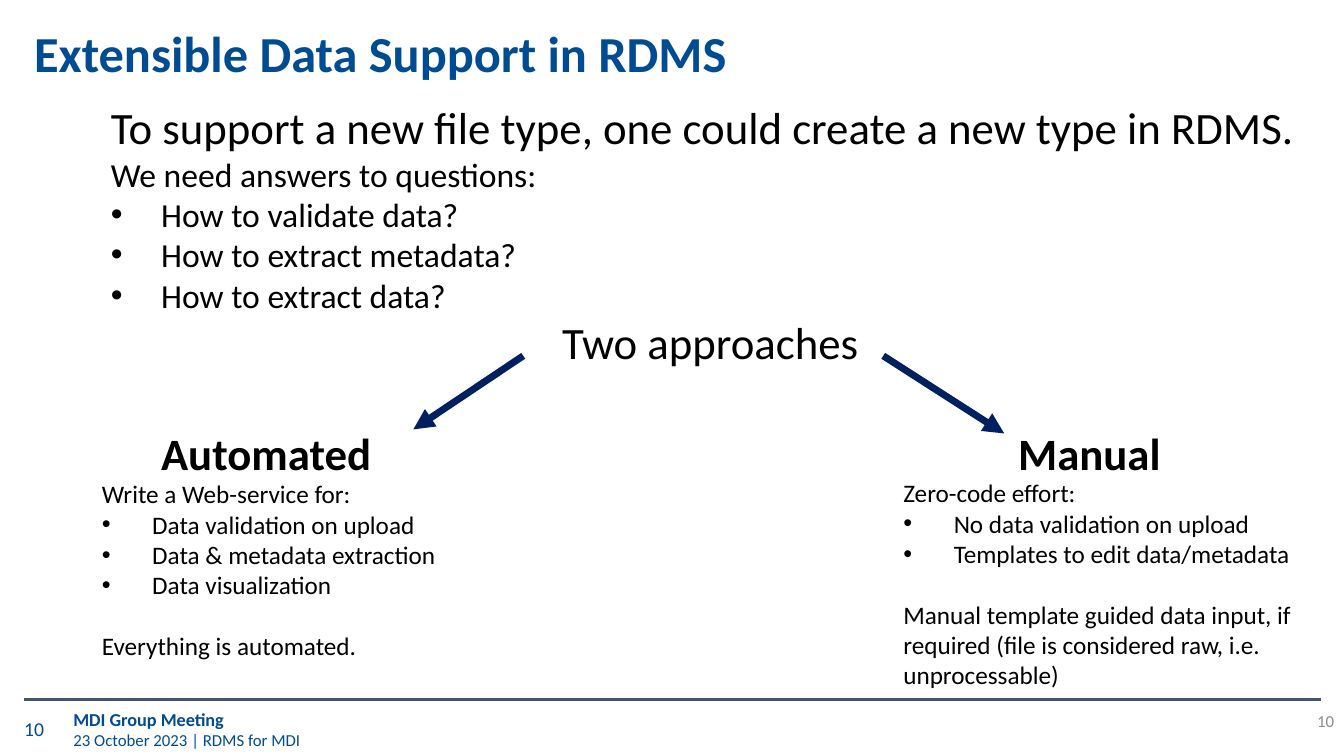
from pptx import Presentation
from pptx.dml.color import RGBColor as RGB
from pptx.enum.shapes import MSO_CONNECTOR as Conn
from pptx.enum.text import MSO_ANCHOR as Anchor, PP_ALIGN as Align
from pptx.oxml.ns import qn
from pptx.util import Inches, Pt
from lxml.etree import SubElement as Sub

COLORS = {"blue": "004C93", "navy": "002060", "slate": "44546A",
          "gray": "8C8C8C", "black": "000000"}


class Deck:
    font = "Calibri"

    def __init__(self):
        self.prs = Presentation()
        self.prs.slide_width = Inches(13.33)
        self.prs.slide_height = Inches(7.5)
        self.slide = self.prs.slides.add_slide(self.prs.slide_layouts[6])

    def text(self, box, paras, color="black", left=0.1, pad=0.05, anchor=Anchor.TOP):
        shape = self.slide.shapes.add_textbox(*map(Inches, box))
        frame = shape.text_frame
        frame.word_wrap = True
        frame.vertical_anchor = anchor
        frame.margin_left, frame.margin_right = Inches(left), Inches(0.1)
        frame.margin_top = frame.margin_bottom = Inches(pad)
        for i, (words, style) in enumerate(paras):
            para = frame.paragraphs[0] if i == 0 else frame.add_paragraph()
            para.text = words
            self.format(para, color, **style)

    def format(self, para, color, size, bold=False, align=Align.LEFT,
               indent=0, bullet=False, before=0, line=None):
        props = para._p.get_or_add_pPr()
        hang = 0.5 if bullet else 0
        props.set("marL", str(Inches(indent + hang)))
        props.set("indent", str(Inches(-hang)))
        if bullet:
            Sub(props, qn("a:buFont")).set("typeface", "Arial")
            Sub(props, qn("a:buChar")).set("char", "•")
        para.alignment = align
        if before:
            para.space_before = Pt(before)
        if line:
            para.line_spacing = line
        for run in para.runs:
            run.font.name = self.font
            run.font.size = Pt(size)
            run.font.bold = bold
            run.font.color.rgb = RGB.from_string(COLORS[color])

    def line(self, start, end, color, width, arrow=False):
        link = self.slide.shapes.add_connector(
            Conn.STRAIGHT, *map(Inches, start + end))
        link.line.color.rgb = RGB.from_string(COLORS[color])
        link.line.width = Pt(width)
        if arrow:
            Sub(link.line._get_or_add_ln(), qn("a:tailEnd")).set("type", "triangle")
        Sub(link._element.spPr, qn("a:effectLst"))

    def save(self):
        self.prs.save("out.pptx")


def body(size, **more):
    return dict(size=size, indent=1, **more)


def main():
    deck = Deck()
    mid = Anchor.MIDDLE

    deck.text((0.24, 6.99, 0.53, 0.47), [("10", dict(size=14))],
              "blue", left=0, anchor=mid)
    deck.line((0.24, 6.94), (13.1, 6.94), "slate", 1.5)
    deck.text((0.63, 6.97, 5.46, 0.53),
              [("MDI Group Meeting", dict(size=13, bold=True)),
               ("23 October 2023 | RDMS for MDI", dict(size=12))],
              "blue", anchor=mid)
    deck.text((0.24, 0.12, 12.87, 0.87),
              [("Extensible Data Support in RDMS",
                dict(size=36, bold=True, line=0.9))],
              "blue", pad=0.04, anchor=mid)
    deck.text((10.33, 6.95, 3, 0.4),
              [("10", dict(size=12, align=Align.RIGHT))], "gray", anchor=mid)

    asks = ["How to validate data?", "How to extract metadata?",
            "How to extract data?"]
    deck.text((0, 0.94, 13.09, 2.8),
              [("To support a new file type, one could create a new type in RDMS.",
                body(32)),
               ("We need answers to questions:", body(24)),
               *[(ask, body(24, bullet=True)) for ask in asks],
               ("Two approaches", body(32, align=Align.CENTER))])

    ways = [
        ("Automated", 1.5, (0.01, 4.7, 4.91, 1.92), "Write a Web-service for:",
         ["Data validation on upload", "Data & metadata extraction",
          "Data visualization"],
         "Everything is automated.", (5.19, 3.53), (4.1, 4.26)),
        ("Manual", 10, (7.96, 4.69, 5.1, 2.22), "Zero-code effort:",
         ["No data validation on upload", "Templates to edit data/metadata"],
         "Manual template guided data input, if required "
         "(file is considered raw, i.e. unprocessable)",
         (8.76, 3.53), (9.96, 4.3)),
    ]
    for name, x, box, lead, items, close, start, end in ways:
        deck.text((x, 4.17, 2.6, 0.64), [(name, dict(size=32, bold=True))])
        deck.text(box, [(lead, body(18)),
                        *[(item, body(18, bullet=True)) for item in items],
                        (close, body(18, before=22))], left=0)
        deck.line(start, end, "navy", 5, arrow=True)

    deck.save()


if __name__ == "__main__":
    main()
